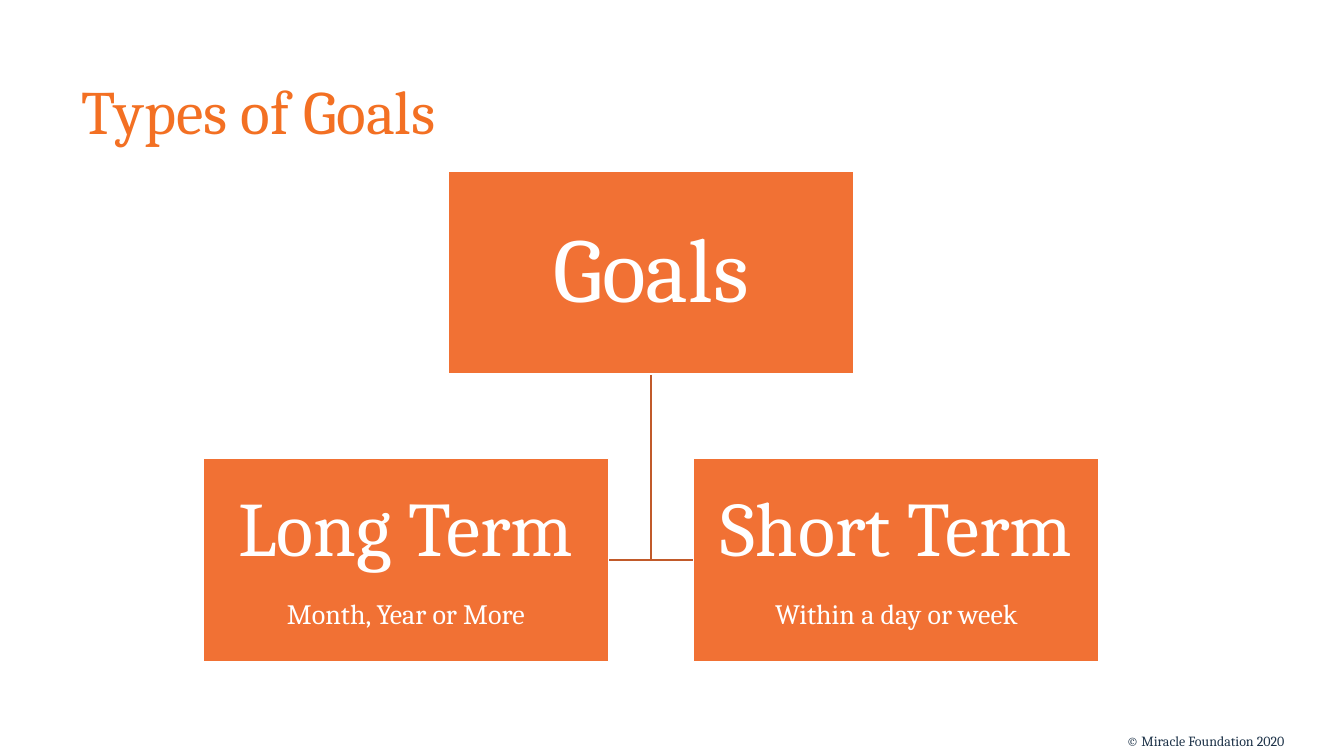
from dataclasses import dataclass

from lxml import etree
from pptx import Presentation
from pptx.dml.color import RGBColor
from pptx.enum import text
from pptx.oxml.ns import qn
from pptx.enum import shapes
from pptx.shapes.autoshape import Shape
from pptx.slide import Slide
from pptx.text.text import _Paragraph
from pptx.util import Cm, Pt


@dataclass(frozen=True)
class Theme:
    font: str = "Cambria"
    heading: RGBColor = RGBColor(0xF3, 0x70, 0x23)
    box: RGBColor = RGBColor(0xF1, 0x71, 0x34)
    branch: RGBColor = RGBColor(0xC1, 0x5A, 0x2A)
    white: RGBColor = RGBColor(0xFF, 0xFF, 0xFF)
    navy: RGBColor = RGBColor(0x1E, 0x33, 0x49)
    heading_size: int = 44
    goals_size: int = 65
    term_size: int = 55
    span_size: int = 20
    copyright_size: int = 10
    line_width: int = 1


@dataclass(frozen=True)
class Goal:
    """A box of the tree; lengths in centimetres."""
    lines: tuple[str, ...]
    sizes: tuple[int, ...]
    left: float
    top: float
    inset: float


THEME = Theme()
BOX_WIDTH, BOX_HEIGHT = 10.22, 5.11
CENTRE = 16.41
SIDE_GAP = 2.14
ROOT_TOP, TERM_TOP = 4.32, 11.56
TERM_SIZES = (THEME.term_size, THEME.span_size)

ROOT = Goal(("Goals",), (THEME.goals_size,), CENTRE - BOX_WIDTH / 2, ROOT_TOP, 0.13)
TERMS = (
    Goal(("Long Term", "Month, Year or More"), TERM_SIZES,
         CENTRE - SIDE_GAP / 2 - BOX_WIDTH, TERM_TOP, 0.1),
    Goal(("Short Term", "Within a day or week"), TERM_SIZES,
         CENTRE + SIDE_GAP / 2, TERM_TOP, 0.1),
)


def style(paragraph: _Paragraph, size: int, colour: RGBColor) -> None:
    for run in paragraph.runs:
        run.font.name = THEME.font
        run.font.size = Pt(size)
        run.font.color.rgb = colour


def add_heading(slide: Slide) -> None:
    heading = slide.shapes.title
    heading.left, heading.top = Cm(1.8), Cm(1.04)
    heading.width, heading.height = Cm(29.21), Cm(3.68)
    frame = heading.text_frame
    frame.text = "Types of Goals"
    frame.vertical_anchor = text.MSO_ANCHOR.MIDDLE
    frame.paragraphs[0].alignment = text.PP_ALIGN.LEFT
    frame.paragraphs[0].line_spacing = 0.9
    style(frame.paragraphs[0], THEME.heading_size, THEME.heading)


def add_branch(slide: Slide, side: int) -> None:
    """Draw the bent line from the root to the left (-1) or right (1) box."""
    start, bend = Cm(ROOT_TOP + BOX_HEIGHT), Cm(TERM_TOP + BOX_HEIGHT / 2)
    builder = slide.shapes.build_freeform(Cm(CENTRE), start)
    builder.add_line_segments(
        [(Cm(CENTRE), bend), (Cm(CENTRE + side * SIDE_GAP / 2), bend)], close=False)
    branch = builder.convert_to_shape()
    branch.shadow.inherit = False
    branch.fill.background()
    branch.line.color.rgb = THEME.branch
    branch.line.width = Pt(THEME.line_width)


def add_goal(slide: Slide, goal: Goal) -> Shape:
    box = slide.shapes.add_shape(
        shapes.MSO_SHAPE.RECTANGLE, Cm(goal.left), Cm(goal.top),
        Cm(BOX_WIDTH), Cm(BOX_HEIGHT))
    box.shadow.inherit = False
    box.fill.solid()
    box.fill.fore_color.rgb = THEME.box
    box.line.color.rgb = THEME.white
    box.line.width = Pt(THEME.line_width)
    frame = box.text_frame
    frame.text = "\n".join(goal.lines)
    frame.word_wrap = True
    frame.vertical_anchor = text.MSO_ANCHOR.MIDDLE
    frame.margin_left = frame.margin_right = Cm(goal.inset)
    frame.margin_top = frame.margin_bottom = Cm(goal.inset)
    for paragraph, size in zip(frame.paragraphs, goal.sizes):
        paragraph.alignment = text.PP_ALIGN.CENTER
        paragraph.line_spacing = 0.9
        # Spacing relative to the type size needs XML
        after = etree.SubElement(paragraph._p.get_or_add_pPr(), qn("a:spcAft"))
        etree.SubElement(after, qn("a:spcPct"), val="35000")
        style(paragraph, size, THEME.white)
    return box


def add_copyright(slide: Slide) -> None:
    frame = slide.shapes.add_textbox(Cm(28.14), Cm(18.34), Cm(5.23), Cm(0.71)).text_frame
    frame.word_wrap = True
    frame.text = "© Miracle Foundation 2020"
    style(frame.paragraphs[0], THEME.copyright_size, THEME.navy)


def main() -> None:
    deck = Presentation()
    deck.slide_width, deck.slide_height = Cm(33.87), Cm(19.05)
    slide = deck.slides.add_slide(deck.slide_layouts.get_by_name("Title Only"))
    add_heading(slide)
    for side in (1, -1):
        add_branch(slide, side)
    for goal in (ROOT, *TERMS):
        add_goal(slide, goal)
    add_copyright(slide)
    deck.save("out.pptx")


if __name__ == "__main__":
    main()
